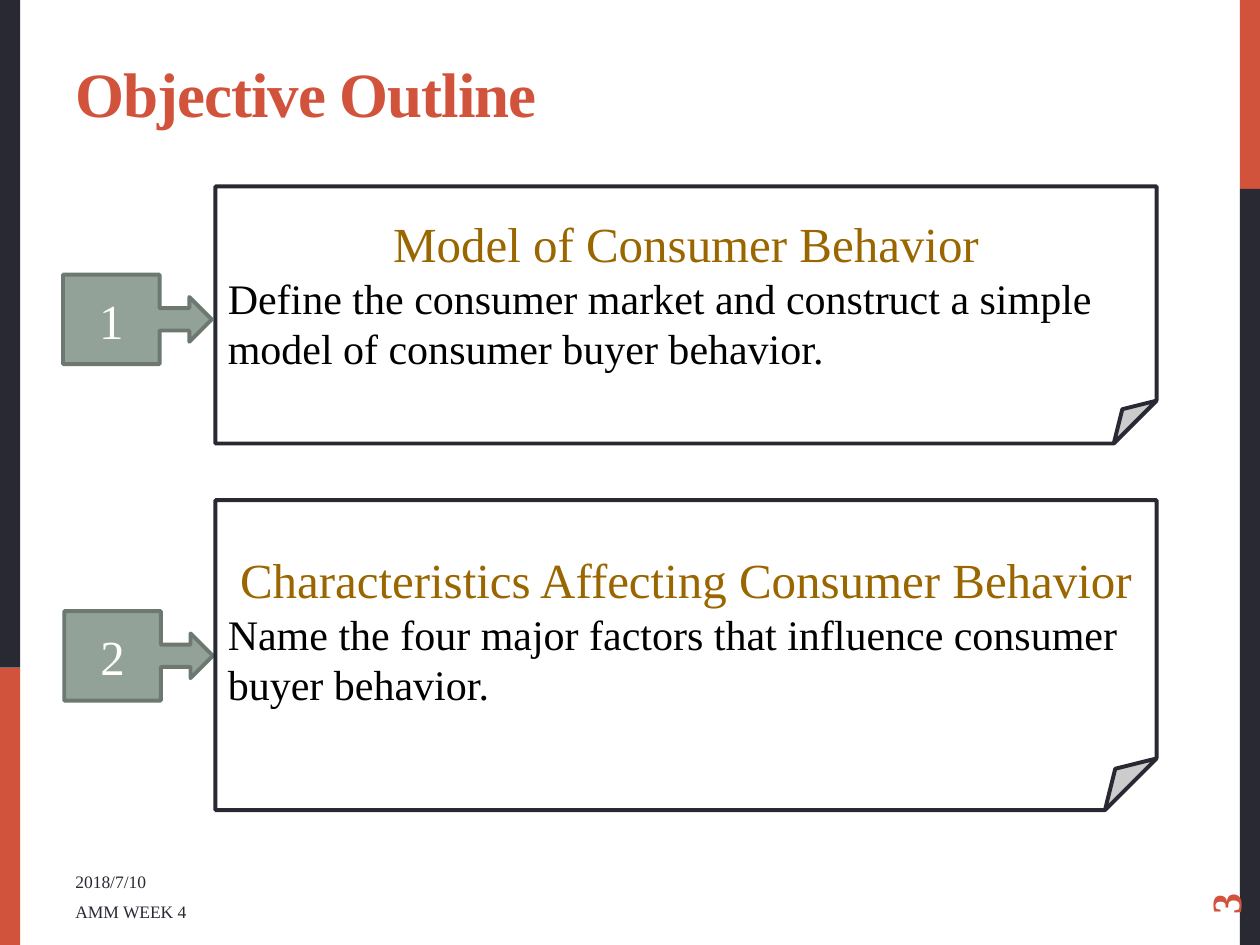
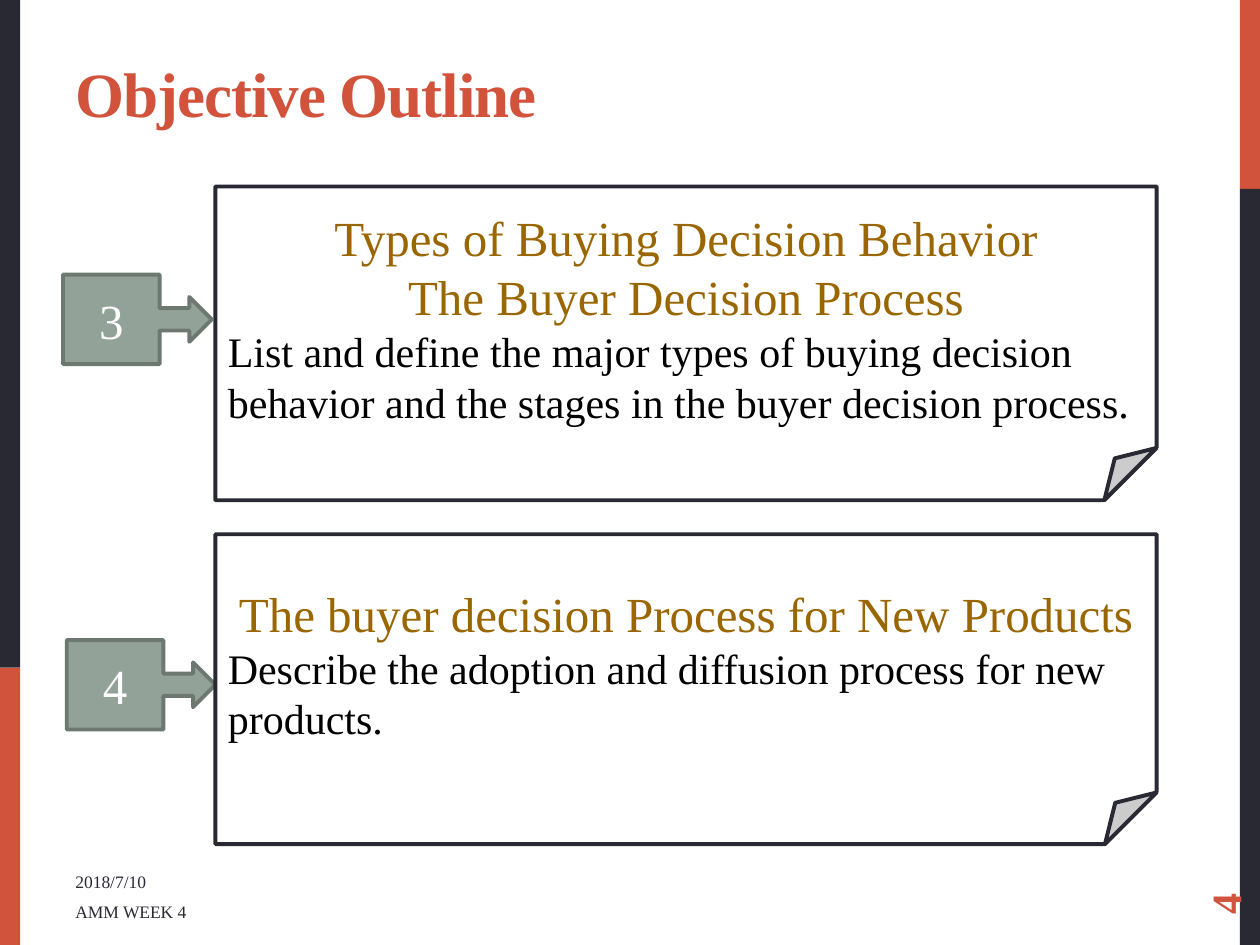
from pptx import Presentation
from pptx import util as u
from pptx.dml.color import RGBColor
from pptx.enum import shapes, text

PX = u.Inches(1) // 100  # 100 px to the inch
FONT = "Times New Roman"
COLORS = {
    "accent": "D2533C", "dark": "292934", "white": "FFFFFF",
    "sage": "93A299", "sage_line": "6D7871",
    "topic": "996600", "body": "000000",
}
LEFT, CENTER = text.PP_ALIGN.LEFT, text.PP_ALIGN.CENTER
TOP, MIDDLE, BOTTOM = (text.MSO_ANCHOR.TOP, text.MSO_ANCHOR.MIDDLE,
                       text.MSO_ANCHOR.BOTTOM)
FORMATS = {
    "title": {"size": u.Pt(36), "bold": True, "color": "accent"},
    "footer": {"size": u.Pt(10), "color": "dark"},
    "page": {"size": u.Pt(24), "bold": True, "color": "accent"},
    "number": {"size": u.Pt(28), "color": "white"},
    "topic": {"size": u.Pt(28), "color": "topic"},
    "goal": {"size": u.Pt(24), "color": "body"},
}

# Each objective: number, callout (left, top), card (top, height), topics, goal
OUTLINES = [
    (3, [
        (1, (50, 218), (148, 204), ["Model of Consumer Behavior"],
         "Define the consumer market and construct a simple model of "
         "consumer buyer behavior."),
        (2, (51, 485), (397, 246),
         ["Characteristics Affecting Consumer Behavior"],
         "Name the four major factors that influence consumer buyer "
         "behavior."),
    ]),
    (4, [
        (3, (50, 218), (148, 249),
         ["Types of Buying Decision Behavior", "The Buyer Decision Process"],
         "List and define the major types of buying decision behavior and "
         "the stages in the buyer decision process."),
        (4, (53, 508), (424, 246),
         ["The buyer decision Process for New Products"],
         "Describe the adoption and diffusion process for new products."),
    ]),
]


def rgb(name):
    return RGBColor.from_string(COLORS[name])


def emu(box):
    return [length * PX for length in box]


def write(holder, paragraphs, anchor=MIDDLE):
    """Fill a shape with (words, format name, alignment) paragraphs."""
    frame = holder.text_frame
    frame.word_wrap = True
    frame.vertical_anchor = anchor
    for index, (words, style, align) in enumerate(paragraphs):
        line = frame.add_paragraph() if index else frame.paragraphs[0]
        line.alignment = align
        run = line.add_run()
        run.text = words
        run.font.name = FONT
        for key, value in FORMATS[style].items():
            if key == "color":
                run.font.color.rgb = rgb(value)
            else:
                setattr(run.font, key, value)
    return frame


def add_label(slide, box, words, style, anchor):
    label = slide.shapes.add_textbox(*emu(box))
    write(label, [(words, style, LEFT)], anchor)
    return label


def add_panel(slide, preset, box, fill, line=None):
    panel = slide.shapes.add_shape(preset, *emu(box))
    panel.shadow.inherit = False
    panel.fill.solid()
    panel.fill.fore_color.rgb = rgb(fill)
    if line:
        panel.line.color.rgb = rgb(line)
        panel.line.width = u.Pt(2.25)
    else:
        panel.line.fill.background()
    return panel


def add_side_band(slide, box, split, upper, lower):
    """Vertical band in two colours, divided at split below its top."""
    left, top, width, height = box
    for y, part, fill in ((top, split, upper),
                          (top + split, height - split, lower)):
        add_panel(slide, shapes.MSO_SHAPE.RECTANGLE,
                  (left, y, width, part), fill)


def add_objective(slide, number, callout_at, card_span, topics, goal):
    # Numbered callout pointing at the card
    callout = add_panel(slide, shapes.MSO_SHAPE.RIGHT_ARROW_CALLOUT,
                        (*callout_at, 118, 71), "sage", "sage_line")
    write(callout, [(str(number), "number", CENTER)])

    # Card with topics and learning goal
    card_top, card_height = card_span
    card = add_panel(slide, shapes.MSO_SHAPE.FOLDED_CORNER,
                     (171, card_top, 747, card_height), "white", "dark")
    write(card, [(topic, "topic", CENTER) for topic in topics]
          + [(goal, "goal", LEFT)])


def add_title(slide, box):
    title = add_label(slide, box, "Objective Outline", "title", BOTTOM)
    run = title.text_frame.paragraphs[0].runs[0]
    run.font._element.set("spc", "-60")  # tightened letters


def add_footer(slide, box, page):
    left, top, width, height = box
    date = add_label(slide, (left, top, width, 33), "2018/7/10",
                     "footer", BOTTOM)
    date.text_frame.margin_bottom = 0
    add_label(slide, (left, top + 35, width, height - 35), "AMM WEEK 4",
              "footer", TOP)
    # Page number, turned to read upwards beside the right band
    number = add_label(slide, (900, 644, 144, 40), str(page), "page", MIDDLE)
    number.rotation = 270


def add_outline_slide(deck, page, objectives):
    slide = deck.slides.add_slide(deck.slide_layouts[6])
    add_side_band(slide, (984, 0, 16, 750), 150, "accent", "dark")
    add_side_band(slide, (0, 0, 16, 750), 530, "dark", "accent")
    for objective in objectives:
        add_objective(slide, *objective)
    add_title(slide, (50, 17, 765, 91))
    add_footer(slide, (50, 675, 375, 66), page)


def main():
    deck = Presentation()
    deck.slide_width, deck.slide_height = emu((1000, 750))
    for page, objectives in OUTLINES:
        add_outline_slide(deck, page, objectives)
    deck.save("out.pptx")


if __name__ == "__main__":
    main()
